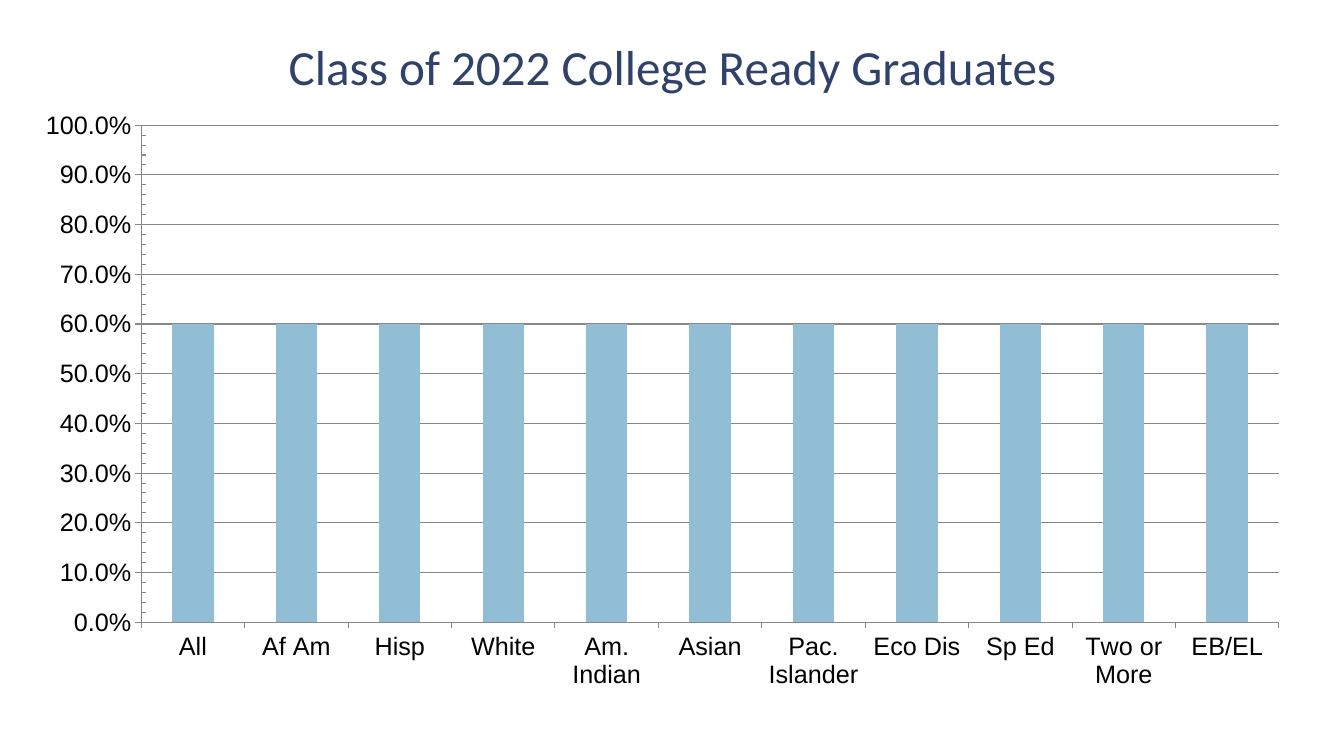
import pptx
import pptx.chart.data
import pptx.dml.color
import pptx.enum.chart
import pptx.enum.text
import pptx.oxml
import pptx.oxml.ns
import pptx.util

Inches = pptx.util.Inches
Pt = pptx.util.Pt
GROUPS = ["All", "Af Am", "Hisp", "White", "Am. Indian", "Asian",
          "Pac. Islander", "Eco Dis", "Sp Ed", "Two or More", "EB/EL"]
READY_RATE = 0.6


def color(code):
    return pptx.dml.color.RGBColor.from_string(code)


class GraduateSlide:
    title_font, title_color = "Calibri", "304269"
    chart_font, chart_color = "Arial", "000000"
    bar_color, line_color = "91BED4", "878787"

    def __init__(self, deck):
        self.page = deck.slides.add_slide(deck.slide_layouts[5])

    def title(self, text, left, top, width, height):
        box = self.page.shapes.title
        box.left, box.top = Inches(left), Inches(top)
        box.width, box.height = Inches(width), Inches(height)
        frame = box.text_frame
        frame.word_wrap = True
        frame.auto_size = pptx.enum.text.MSO_AUTO_SIZE.NONE
        frame.vertical_anchor = pptx.enum.text.MSO_ANCHOR.MIDDLE
        para = frame.paragraphs[0]
        para.alignment = pptx.enum.text.PP_ALIGN.CENTER
        span = para.add_run()
        span.text = text
        span.font.name = self.title_font
        span.font.size = Pt(35.1)
        span.font.color.rgb = color(self.title_color)

    def column_chart(self, categories, values, left, top, width, height):
        data = pptx.chart.data.CategoryChartData(number_format="0.0%")
        data.categories = categories
        data.add_series("Series 1", values)
        chart = self.page.shapes.add_chart(
            pptx.enum.chart.XL_CHART_TYPE.COLUMN_CLUSTERED,
            Inches(left), Inches(top), Inches(width), Inches(height), data).chart
        chart.has_legend = False
        chart.has_title = False
        chart.font.name = self.chart_font
        chart.font.size = Pt(18)
        chart.font.color.rgb = color(self.chart_color)
        plot = chart.plots[0]
        plot.gap_width = 150
        plot.vary_by_categories = False
        fill = plot.series[0].format.fill
        fill.solid()
        fill.fore_color.rgb = color(self.bar_color)
        self.axes(chart)
        self.plot_area(chart, x=0.095, y=0.044, w=0.885, h=0.826)

    def axes(self, chart):
        marks = pptx.enum.chart.XL_TICK_MARK
        scale = chart.value_axis
        scale.minimum_scale, scale.maximum_scale = 0, 1
        scale.major_unit, scale.minor_unit = 0.1, 0.02
        scale.minor_tick_mark = marks.INSIDE
        scale.tick_labels.number_format = "0.0%"
        scale.tick_labels.number_format_is_linked = False
        scale.has_major_gridlines = True
        for axis in (chart.category_axis, scale):
            axis.major_tick_mark = marks.OUTSIDE
        for part in (chart.category_axis, scale, scale.major_gridlines):
            part.format.line.color.rgb = color(self.line_color)
            part.format.line.width = Pt(0.75)

    def plot_area(self, chart, **place):
        area = chart._chartSpace.chart.plotArea
        for layout in area.findall(pptx.oxml.ns.qn("c:layout")):
            area.remove(layout)
        modes = "".join(f'<c:{name}Mode val="edge"/>' for name in "xy")
        sizes = "".join(f'<c:{name} val="{size}"/>' for name, size in place.items())
        area.insert(0, pptx.oxml.parse_xml(
            f'<c:layout {pptx.oxml.ns.nsdecls("c")}><c:manualLayout>'
            f'<c:layoutTarget val="inner"/>{modes}{sizes}'
            '</c:manualLayout></c:layout>'))


def main():
    deck = pptx.Presentation()
    deck.slide_width, deck.slide_height = Inches(13.33), Inches(7.5)
    slide = GraduateSlide(deck)
    slide.column_chart(GROUPS, [READY_RATE] * len(GROUPS), 0.19, 0.98, 12.75, 5.97)
    slide.title("Class of 2022 College Ready Graduates", 1.67, 0.15, 10, 1)
    deck.save("out.pptx")


if __name__ == "__main__":
    main()
